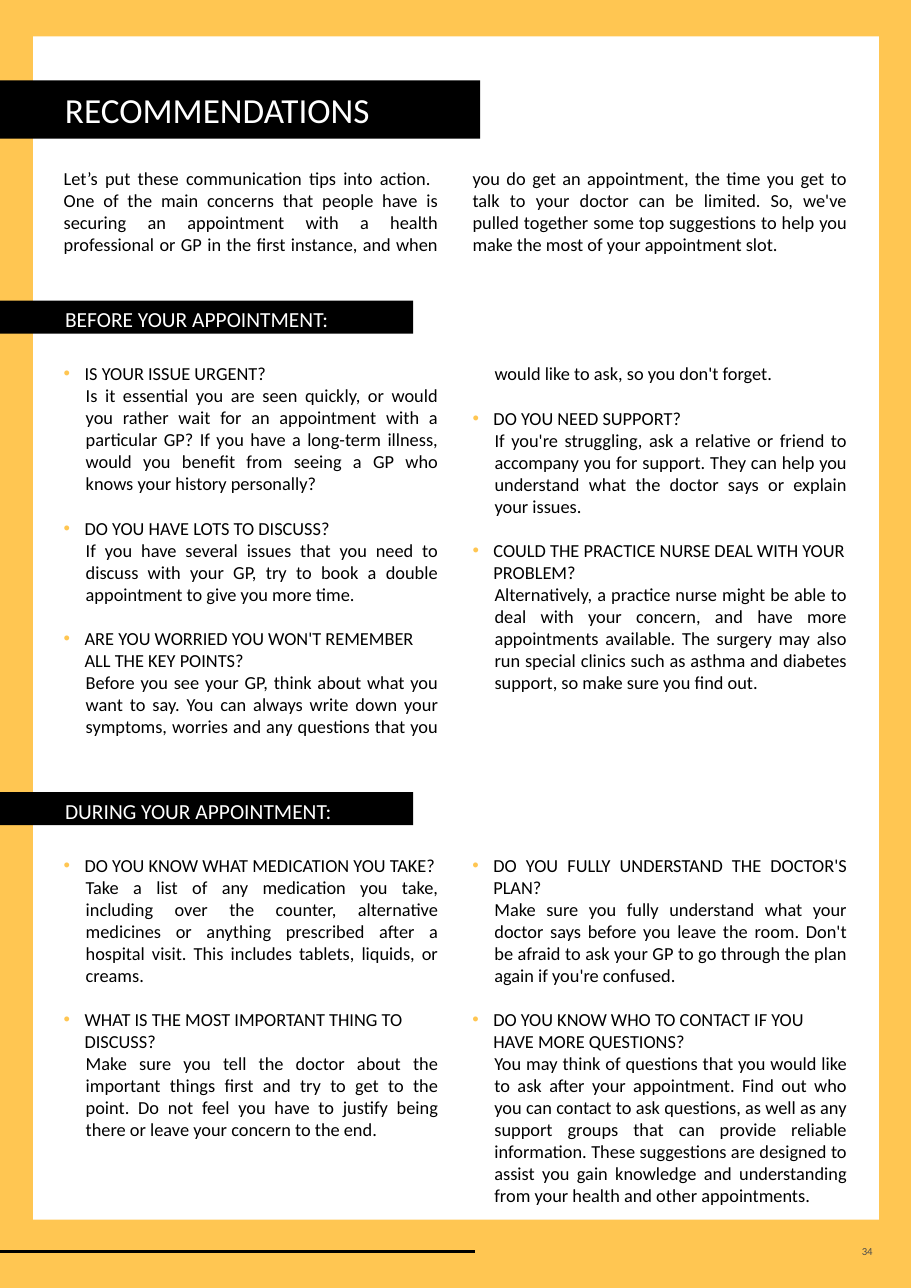
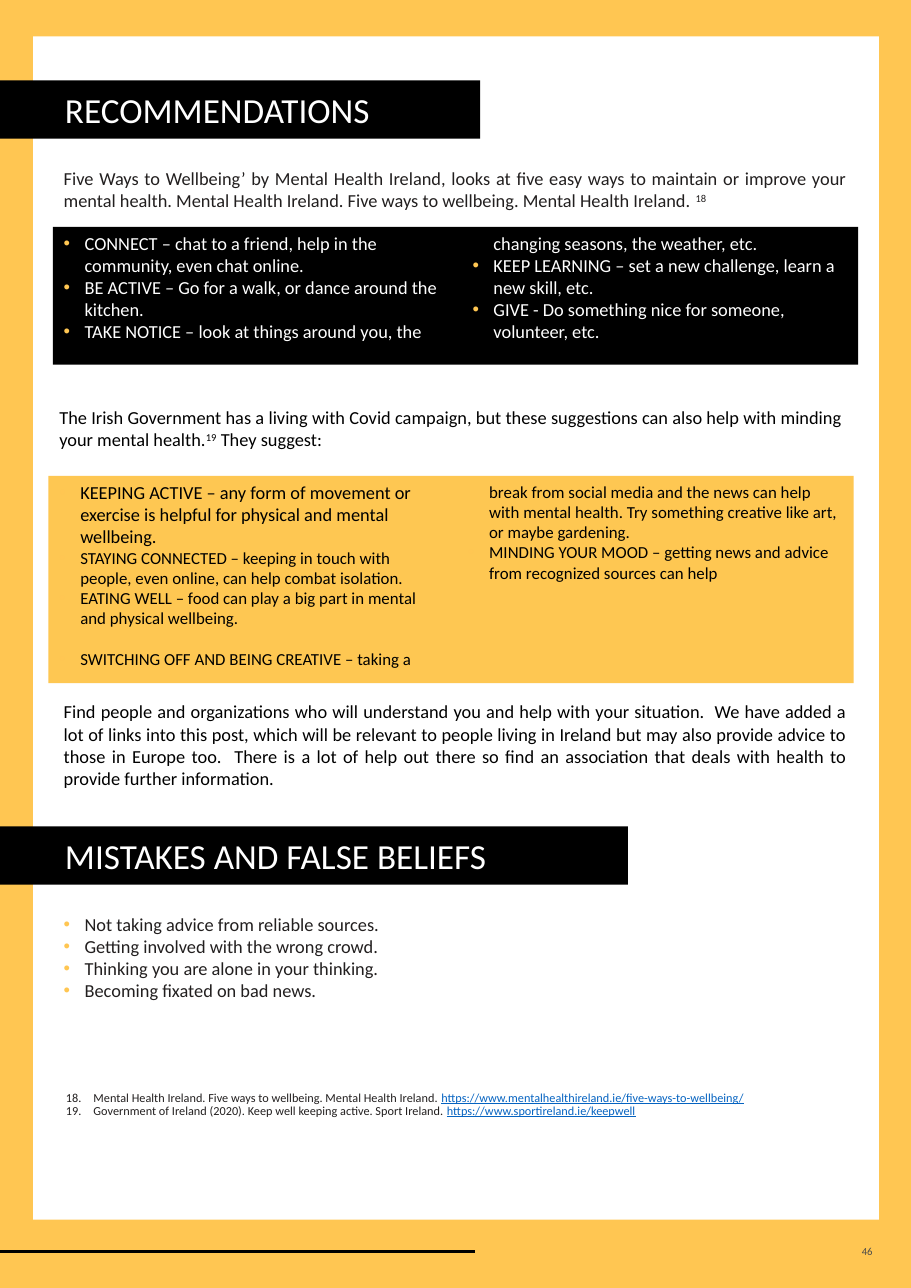
from dataclasses import dataclass

from lxml import etree
from pptx import Presentation
from pptx.dml.color import RGBColor
from pptx.enum.shapes import MSO_CONNECTOR, MSO_SHAPE
from pptx.enum.text import MSO_ANCHOR, PP_ALIGN
from pptx.oxml.ns import qn
from pptx.util import Inches, Pt

RECT = MSO_SHAPE.RECTANGLE
STRAIGHT = MSO_CONNECTOR.STRAIGHT
TOP, MIDDLE = MSO_ANCHOR.TOP, MSO_ANCHOR.MIDDLE
LEFT, RIGHT, JUSTIFY = PP_ALIGN.LEFT, PP_ALIGN.RIGHT, PP_ALIGN.JUSTIFY

C = {"yellow": "FFC652", "panel": "FEC752", "white": "FFFFFF", "black": "000000",
     "ink": "221F1F", "grey": "4B4B4B", "link": "0563C1"}
FONT = "Calibri"
PAGE_W, PAGE_H = 8.27, 11.69
BODY_X, BODY_W = 0.48, 7.31
INSET, GUTTER = 0.1, 0.31
COL_W = (BODY_W - 2 * INSET - GUTTER) / 2
HANG = 0.19


@dataclass
class Para:
    """One paragraph: runs are (text, style) pairs, style being '', 'sup' or 'link'."""
    runs: list
    align: PP_ALIGN = LEFT
    marker: str = ""
    indent: float = 0
    before: float = 0
    size: float = 12
    spacing: float = 1


def plain(text, **options):
    """Return a paragraph made of one run."""
    return Para([(text, "")], **options)


def bullet(text, **options):
    """Return a bulleted paragraph with a hanging indent."""
    return plain(text, marker="dot", indent=HANG, **options)


def question_list(questions):
    """Turn (question, answer, alignment) rows into spaced paragraphs."""
    paras = []
    for i, (question, answer, align) in enumerate(questions):
        paras.append(bullet(question, align=align, before=14.6 if i else 0))
        paras.append(plain(answer, align=JUSTIFY, indent=0.2))
    return paras


def rgb(name):
    """Look up a palette colour."""
    return RGBColor.from_string(C[name])


def set_marker(p, para):
    """Set the indent and the bullet or number of a paragraph."""
    pPr = p._p.get_or_add_pPr()
    pPr.set("marL", str(Inches(para.indent)))
    if not para.marker:
        return
    pPr.set("indent", str(-Inches(para.indent)))
    if para.marker == "dot":
        clr = etree.SubElement(pPr, qn("a:buClr"))
        etree.SubElement(clr, qn("a:srgbClr"), val=C["yellow"])
        etree.SubElement(pPr, qn("a:buFont"), typeface="Arial")
        etree.SubElement(pPr, qn("a:buChar"), char="•")
    else:
        etree.SubElement(pPr, qn("a:buAutoNum"), type="arabicPeriod", startAt=para.marker)


def write(sp, paras, color, anchor=TOP, columns=1):
    """Fill a shape with formatted paragraphs."""
    tf = sp.text_frame
    tf.word_wrap = True
    tf.vertical_anchor = anchor
    if columns > 1:
        body = tf._txBody.bodyPr
        body.set("numCol", str(columns))
        body.set("spcCol", str(Inches(GUTTER)))
    for i, para in enumerate(paras):
        p = tf.paragraphs[0] if i == 0 else tf.add_paragraph()
        set_marker(p, para)
        p.alignment = para.align
        p.line_spacing = para.spacing
        if para.before:
            p.space_before = Pt(para.before)
        for text, style in para.runs:
            r = p.add_run()
            r.text = text
            r.font.name, r.font.size = FONT, Pt(para.size)
            r.font.color.rgb = rgb("link" if style == "link" else color)
            if style == "link":
                r.font.underline = True
            elif style == "sup":
                r._r.get_or_add_rPr().set("baseline", "30000")


def rect(s, x, y, w, h, fill):
    """Add a plain filled rectangle."""
    sp = s.shapes.add_shape(RECT, Inches(x), Inches(y), Inches(w), Inches(h))
    sp.shadow.inherit = False
    sp.fill.solid()
    sp.fill.fore_color.rgb = rgb(fill)
    sp.line.fill.background()
    return sp


def text(s, x, y, w, h, paras, color="black", **options):
    """Add a text box."""
    sp = s.shapes.add_textbox(Inches(x), Inches(y), Inches(w), Inches(h))
    write(sp, paras, color, **options)
    return sp


def bar(s, y, w, h, label, size, anchor):
    """Add a black heading bar that runs in from the left edge."""
    sp = rect(s, 0, y, w, h, "black")
    sp.text_frame.margin_left = Inches(0.59)
    write(sp, [plain(label, size=size)], "white", anchor)


def title_bar(s, y, w, label):
    """Add a large heading bar."""
    bar(s, y, w, 0.53, label, 23, MIDDLE)


def section_bar(s, y, label):
    """Add a small heading bar."""
    bar(s, y, 3.75, 0.3, label, 14, TOP)


def new_page(prs, number):
    """Add a page with its frame, footer rule, number and title."""
    s = prs.slides.add_slide(prs.slide_layouts[6])
    s.background.fill.solid()
    s.background.fill.fore_color.rgb = rgb("yellow")
    rect(s, 0.3, 0.33, 7.68, 10.74, "white")
    rule = s.shapes.add_connector(STRAIGHT, 0, Inches(11.36), Inches(4.31), Inches(11.36))
    rule.line.color.rgb = rgb("black")
    rule.line.width = Pt(1.5)
    etree.SubElement(rule._element.spPr, qn("a:effectLst"))
    text(s, 6.94, 11.28, 1.08, 0.16, [plain(number, align=RIGHT, size=7)], "grey",
         anchor=MIDDLE)
    title_bar(s, 0.73, 4.36, "RECOMMENDATIONS")
    return s


BEFORE = [
    ("IS YOUR ISSUE URGENT?",
     "Is it essential you are seen quickly, or would you rather wait for an appointment with a "
     "particular GP? If you have a long-term illness, would you benefit from seeing a GP who "
     "knows your history personally?", LEFT),
    ("DO YOU HAVE LOTS TO DISCUSS?",
     "If you have several issues that you need to discuss with your GP, try to book a double "
     "appointment to give you more time.", LEFT),
    ("ARE YOU WORRIED YOU WON'T REMEMBER ALL THE KEY POINTS?",
     "Before you see your GP, think about what you want to say. You can always write down your "
     "symptoms, worries and any questions that you would like to ask, so you don't forget.", LEFT),
    ("DO YOU NEED SUPPORT?",
     "If you're struggling, ask a relative or friend to accompany you for support. They can help "
     "you understand what the doctor says or explain your issues.", LEFT),
    ("COULD THE PRACTICE NURSE DEAL WITH YOUR PROBLEM?",
     "Alternatively, a practice nurse might be able to deal with your concern, and have more "
     "appointments available. The surgery may also run special clinics such as asthma and "
     "diabetes support, so make sure you find out.", LEFT),
]

DURING = [
    [("DO YOU KNOW WHAT MEDICATION YOU TAKE?",
      "Take a list of any medication you take, including over the counter, alternative medicines "
      "or anything prescribed after a hospital visit. This includes tablets, liquids, or creams.",
      LEFT),
     ("WHAT IS THE MOST IMPORTANT THING TO DISCUSS?",
      "Make sure you tell the doctor about the important things first and try to get to the "
      "point. Do not feel you have to justify being there or leave your concern to the end.",
      LEFT)],
    [("DO YOU FULLY UNDERSTAND THE DOCTOR'S PLAN?",
      "Make sure you fully understand what your doctor says before you leave the room. Don't be "
      "afraid to ask your GP to go through the plan again if you're confused.", JUSTIFY),
     ("DO YOU KNOW WHO TO CONTACT IF YOU HAVE MORE QUESTIONS?",
      "You may think of questions that you would like to ask after your appointment. Find out "
      "who you can contact to ask questions, as well as any support groups that can provide "
      "reliable information. These suggestions are designed to assist you gain knowledge and "
      "understanding from your health and other appointments.", LEFT)],
]

FIVE_WAYS = [
    "CONNECT – chat to a friend, help in the community, even chat online.",
    "BE ACTIVE – Go for a walk, or dance around the kitchen.",
    "TAKE NOTICE – look at things around you, the changing seasons, the weather, etc.",
    "KEEP LEARNING – set a new challenge, learn a new skill, etc.",
    "GIVE - Do something nice for someone, volunteer, etc.",
]

CAMPAIGN = [
    ("KEEPING ACTIVE – any form of movement or exercise is helpful for physical and mental "
     "wellbeing.", 12, 0),
    ("STAYING CONNECTED – keeping in touch with people, even online, can help combat "
     "isolation.", 11, 0),
    ("EATING WELL – food can play a big part in mental and physical wellbeing.", 11, 0),
    ("SWITCHING OFF AND BEING CREATIVE – taking a break from social media and the news can help "
     "with mental health. Try something creative like art, or maybe gardening.", 11, 13.4),
    ("MINDING YOUR MOOD – getting news and advice from recognized sources can help", 11, 0),
]

MISTAKES = [
    "Not taking advice from reliable sources.",
    "Getting involved with the wrong crowd.",
    "Thinking you are alone in your thinking.",
    "Becoming fixated on bad news.",
]

SOURCES = [
    ("Mental Health Ireland. Five ways to wellbeing. Mental Health Ireland. ",
     "https://www.mentalhealthireland.ie/five-ways-to-wellbeing/"),
    ("Government of Ireland (2020). Keep well keeping active. Sport Ireland. ",
     "https://www.sportireland.ie/keepwell"),
]


def appointment_page(prs):
    """Build the page of advice before and during an appointment."""
    s = new_page(prs, "34")
    text(s, BODY_X, 1.47, BODY_W, 0.95, [plain(
        "Let’s put these communication tips into action.  One of the main concerns that people "
        "have is securing an appointment with a health professional or GP in the first instance, "
        "and when you do get an appointment, the time you get to talk to your doctor can be "
        "limited. So, we've pulled together some top suggestions to help you make the most of "
        "your appointment slot.", align=JUSTIFY)], columns=2)
    section_bar(s, 2.73, "BEFORE YOUR APPOINTMENT:")
    text(s, BODY_X, 3.24, BODY_W, 3.58, question_list(BEFORE), columns=2)
    section_bar(s, 7.19, "DURING YOUR APPOINTMENT:")
    for i, questions in enumerate(DURING):
        text(s, BODY_X + i * (COL_W + GUTTER), 7.7, COL_W + 2 * INSET, 3.4,
             question_list(questions))


def wellbeing_page(prs):
    """Build the page of wellbeing tips, mistakes and sources."""
    s = new_page(prs, "46")
    text(s, BODY_X, 1.47, BODY_W, 0.55, [Para([
        ("Five Ways to Wellbeing’ by Mental Health Ireland, looks at five easy ways to maintain "
         "or improve your mental health. Mental Health Ireland. Five ways to wellbeing. Mental "
         "Health Ireland. ", ""), ("18", "sup")], JUSTIFY)], "ink")
    write(rect(s, BODY_X, 2.06, BODY_W, 1.25, "black"),
          [bullet(way) for way in FIVE_WAYS], "white", columns=2)
    text(s, 0.44, 3.64, BODY_W, 0.55, [Para([
        ("The Irish Government has a living with Covid campaign, but these suggestions can also "
         "help with minding your mental health.", ""), ("19", "sup"),
        (" They suggest:", "")], JUSTIFY)])
    write(rect(s, 0.44, 4.32, BODY_W, 1.88, "panel"),
          [bullet(tip, size=size, before=gap) for tip, size, gap in CAMPAIGN],
          "black", columns=2)
    text(s, BODY_X, 6.31, BODY_W, 0.95, [plain(
        "Find people and organizations who will understand you and help with your situation.  We "
        "have added a lot of links into this post, which will be relevant to people living in "
        "Ireland but may also provide advice to those in Europe too.  There is a lot of help out "
        "there so find an association that deals with health to provide further information.",
        align=JUSTIFY)])
    title_bar(s, 7.5, 5.7, "MISTAKES AND FALSE BELIEFS")
    text(s, BODY_X, 8.24, BODY_W, 0.95, [bullet(m, align=JUSTIFY) for m in MISTAKES], "ink")
    text(s, 0.5, 9.86, 7.25, 0.4,
         [Para([(source, ""), (url, "link")], marker="18", indent=0.25, size=8, spacing=0.9)
          for source, url in SOURCES], "ink")


def main():
    """Build and save the presentation."""
    prs = Presentation()
    prs.slide_width, prs.slide_height = Inches(PAGE_W), Inches(PAGE_H)
    appointment_page(prs)
    wellbeing_page(prs)
    prs.save("out.pptx")


if __name__ == "__main__":
    main()
